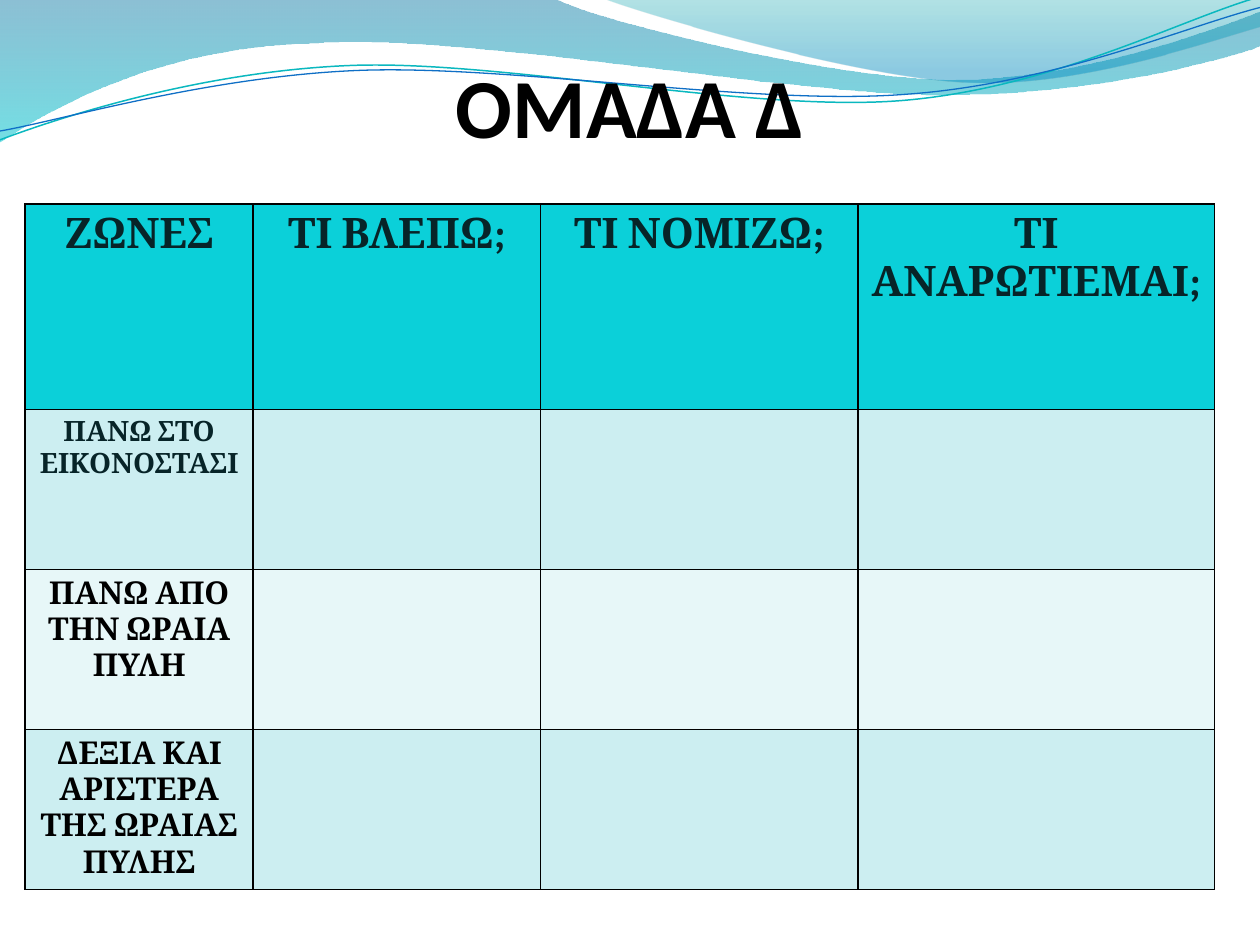
from math import cos, radians, sin

from pptx import Presentation
from pptx.dml.color import RGBColor
from pptx.enum.text import PP_ALIGN, MSO_ANCHOR
from pptx.oxml import parse_xml
from pptx.oxml.ns import nsdecls
from pptx.util import Inches, Pt

THEME = {
    "black": "000000", "ink": "072428", "head": "0BD0D9",
    "bands": ("CCEEF1", "E7F7F8"),
    "title": 48, "top": 24, "small": 16, "label": 18,
    "display": "Calibri", "body": "Cambria",
}
TITLE = "ΟΜΑΔΑ Δ"
HEADS = ["ΖΩΝΕΣ", "ΤΙ ΒΛΕΠΩ;", "ΤΙ ΝΟΜΙΖΩ;", "ΤΙ ΑΝΑΡΩΤΙΕΜΑΙ;"]
ZONES = [
    ("ΠΑΝΩ ΣΤΟ ΕΙΚΟΝΟΣΤΑΣΙ", "small", "ink"),
    ("ΠΑΝΩ ΑΠΟ ΤΗΝ ΩΡΑΙΑ ΠΥΛΗ", "label", "black"),
    ("ΔΕΞΙΑ ΚΑΙ ΑΡΙΣΤΕΡΑ ΤΗΣ ΩΡΑΙΑΣ ΠΥΛΗΣ", "label", "black"),
]
COLS = [1.81, 2.28, 2.52, 2.83]
ROWS = [1.63] + [1.27] * len(ZONES)
FRAME = (0.2, 1.62, 9.45, 5.47)

WAVES = [
    ([(0, 0), (4.4, -0.01), (4.76, 0.17, 6.64, 0.63, 7.58, 0.63),
      (8.53, 0.63, 9.58, 0.26, 10, 0.09), (10.01, 0.36),
      (9.83, 0.44, 8.7, 0.76, 7.46, 0.75),
      (6.22, 0.75, 3.82, 0.28, 2.57, 0.34),
      (1.29, 0.36, 0.46, 0.83, -0.01, 1.13), (0, 0)],
     [(0, "0074A1", 45), (1, "00C6CF", 55)]),
    ([(4.79, -0.01), (5.09, 0.11, 6.82, 0.62, 7.69, 0.65),
      (8.56, 0.69, 9.61, 0.32, 10, 0.21), (10, 0), (4.79, -0.01)],
     [(0, "00A1A9", 30), (0.8, "008BBF", 45)]),
]
TILT = 357.3
CURVES = [
    ([(0, 1.11), (0.48, 0.93, 1.58, 0.57, 2.77, 0.52),
      (3.95, 0.47, 5.93, 0.89, 7.13, 0.8),
      (8.33, 0.71, 9.38, 0.15, 9.98, -0.02)], (4.99, 0.57), "0AB8BF", 0.85),
    ([(0, 1.04), (0.47, 0.96, 1.64, 0.61, 2.83, 0.56),
      (4.03, 0.51, 5.97, 0.84, 7.17, 0.75),
      (8.36, 0.67, 9.41, 0.21, 10, 0.06)], (5, 0.59), "0F6FC6", 0.75),
]


def rgb(code):
    return RGBColor.from_string(code)


def pairs(seg):
    return list(zip(seg[::2], seg[1::2]))


def level(seg, hub):
    turn = radians(-TILT)
    flat = []
    for x, y in pairs(seg):
        dx, dy = x - hub[0], y - hub[1]
        flat += [hub[0] + dx * cos(turn) - dy * sin(turn),
                 hub[1] + dx * sin(turn) + dy * cos(turn)]
    return flat


def outline(slide, segs, close):
    pts = [(Inches(x), Inches(y)) for seg in segs for x, y in pairs(seg)]
    form = slide.shapes.build_freeform(*pts[0])
    form.add_line_segments(pts[1:], close=close)
    shape = form.convert_to_shape()
    shape.shadow.inherit = False
    lines = iter(shape.element.xpath(".//a:path/a:lnTo"))
    for seg in segs[1:]:
        group = [next(lines) for _ in pairs(seg)]
        if len(group) == 3:
            bend = parse_xml(f'<a:cubicBezTo {nsdecls("a")}/>')
            group[0].addprevious(bend)
            for line in group:
                bend.append(line[0])
                line.getparent().remove(line)
    return shape


def add_wave(slide, segs, stops):
    shape = outline(slide, segs, True)
    shape.line.fill.background()
    shape.fill.gradient()
    shape.fill.gradient_angle = 270
    for stop, (place, code, share) in zip(shape.fill.gradient_stops, stops):
        stop.position = place
        stop.color.rgb = rgb(code)
    tints = shape.element.spPr.xpath("./a:gradFill//a:srgbClr")
    for tint, (_, _, share) in zip(tints, stops):
        tint.append(parse_xml(f'<a:alpha {nsdecls("a")} val="{share * 1000}"/>'))


def add_curve(slide, segs, hub, code, width):
    shape = outline(slide, [level(seg, hub) for seg in segs], False)
    shape.rotation = TILT
    shape.fill.background()
    shape.line.color.rgb = rgb(code)
    shape.line.width = Pt(width)


def write(frame, text, size, face, ink):
    frame.text = text
    para = frame.paragraphs[0]
    para.alignment = PP_ALIGN.CENTER
    font = para.runs[0].font
    font.size, font.name, font.bold = Pt(THEME[size]), THEME[face], True
    font.color.rgb = rgb(THEME[ink])


def add_edges(cell):
    props = cell._tc.get_or_add_tcPr()
    for i, side in enumerate(("lnL", "lnR", "lnT", "lnB")):
        props.insert(i, parse_xml(
            f'<a:{side} {nsdecls("a")} w="{Pt(1)}"><a:solidFill>'
            f'<a:srgbClr val="{THEME["black"]}"/></a:solidFill></a:{side}>'))


def add_grid(slide):
    box = [Inches(n) for n in FRAME]
    holder = slide.shapes.add_table(len(ROWS), len(COLS), *box)
    grid = holder.table
    for col, width in zip(grid.columns, COLS):
        col.width = Inches(width)
    for r, height in enumerate(ROWS):
        grid.rows[r].height = Inches(height)
        shade = THEME["bands"][(r - 1) % 2] if r else THEME["head"]
        for cell in grid.rows[r].cells:
            cell.fill.solid()
            cell.fill.fore_color.rgb = rgb(shade)
            add_edges(cell)
    holder.width, holder.height = box[2:]
    for c, text in enumerate(HEADS):
        write(grid.cell(0, c).text_frame, text, "top", "body", "ink")
    for r, (text, size, ink) in enumerate(ZONES, 1):
        write(grid.cell(r, 0).text_frame, text, size, "body", ink)


def add_title(slide):
    title = slide.shapes.title
    title.left, title.top = Inches(0.5), Inches(0)
    title.width, title.height = Inches(9), Inches(1.23)
    frame = title.text_frame
    frame.vertical_anchor = MSO_ANCHOR.BOTTOM
    frame.margin_left = frame.margin_right = frame.margin_bottom = 0
    frame.margin_top = Inches(0.05)
    write(frame, TITLE, "title", "display", "black")
    title.element.getparent().append(title.element)


def main():
    deck = Presentation()
    deck.slide_width, deck.slide_height = Inches(10), Inches(7.5)
    slide = deck.slides.add_slide(deck.slide_layouts[5])
    for wave in WAVES:
        add_wave(slide, *wave)
    for curve in CURVES:
        add_curve(slide, *curve)
    add_title(slide)
    add_grid(slide)
    deck.save("out.pptx")


if __name__ == "__main__":
    main()
